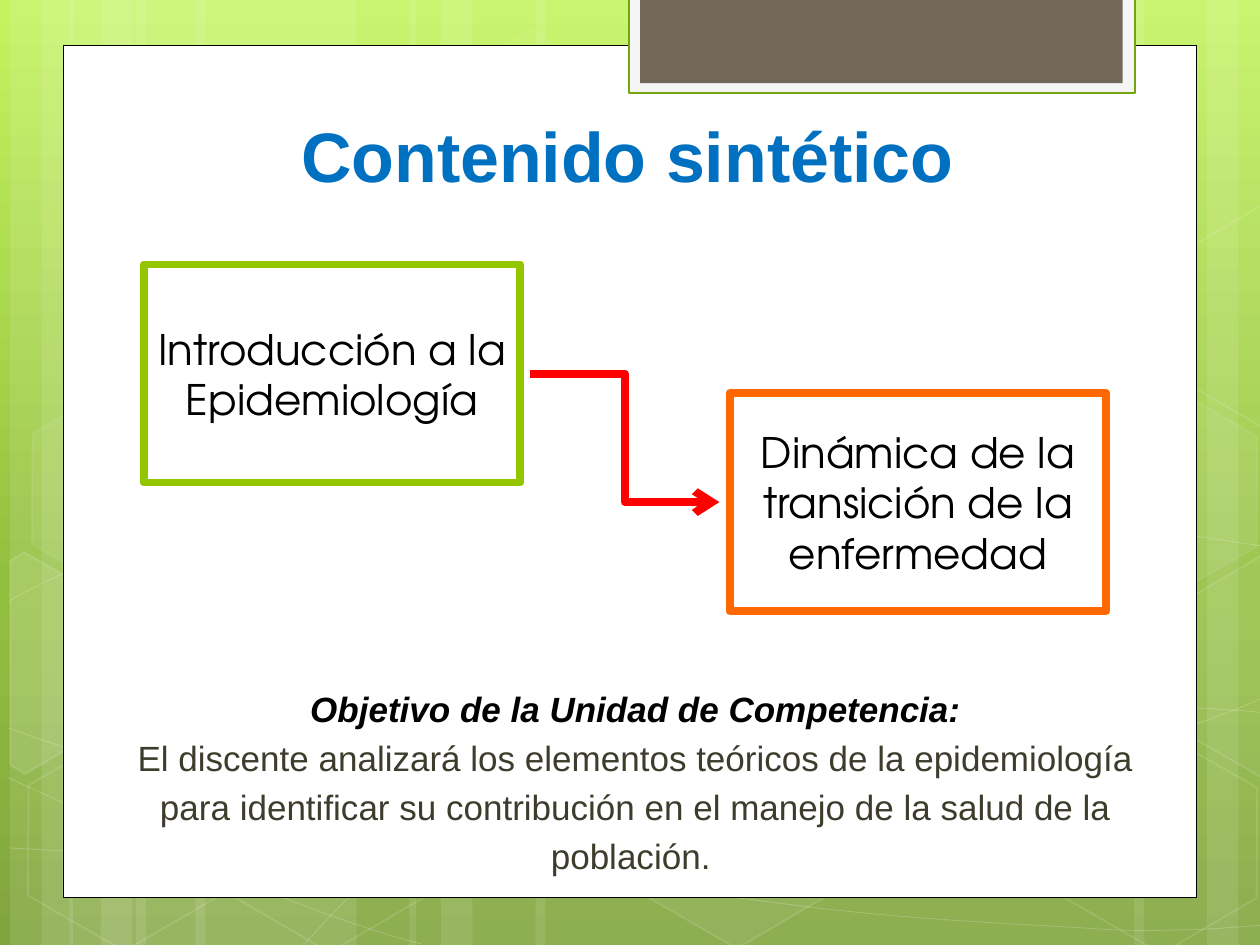
from copy import deepcopy
from dataclasses import dataclass
from math import cos, radians, sin

from lxml.etree import SubElement
from pptx import Presentation
from pptx.dml.color import RGBColor
from pptx.enum.shapes import MSO_CONNECTOR, MSO_SHAPE
from pptx.enum.text import MSO_ANCHOR, PP_ALIGN
from pptx.oxml.ns import qn
from pptx.util import Inches, Pt


@dataclass(frozen=True)
class Theme:
    sky: tuple = ((0, "C3F35F"), (0.62, "93BF3F"), (1, "81A53E"))
    white: str = "FFFFFF"
    black: str = "000000"
    tab: str = "F5F5F5"
    tab_edge: str = "74A510"
    tab_core: str = "71685A"
    title: str = "0070C0"
    body: str = "3E3D2D"
    green: str = "94C600"
    orange: str = "FF6700"
    red: str = "FF0000"
    font: str = "Arial"
    box_font: str = "TeX Gyre Adventor"
    title_size: int = 40
    body_size: int = 20
    box_size: int = 24
    thick: float = 4.5


THEME = Theme()
TILT = 30

STRIPES = [
    (1.08, 1.75), (0.08, 0.5), (0.33, 0.83), (1.55, 1.75), (0.55, 0.5), (0.8, 0.83),
    (7.33, 1.75), (9.58, 0.5), (9, 0.83), (4.25, 3.08), (3.25, 0.5), (3.5, 0.83),
]
CURVES = [
    [(0.07, 6.73), (0.61, 6.76), (1.15, 6.79), (1.9, 6.78), (2.65, 6.77), (3.58, 6.75),
     (4.58, 6.65), (5.58, 6.55), (7, 6.36), (7.92, 6.17), (8.83, 5.98), (9.77, 5.68),
     (10.07, 5.51)],
    [(0.07, 4.77), (0.36, 4.61), (0.65, 4.46), (1.21, 4.31), (1.78, 4.16), (2.59, 3.94),
     (3.47, 3.87), (4.36, 3.8), (5.44, 3.79), (6.54, 3.87), (7.64, 3.95), (9.47, 4.26),
     (10.07, 4.34)],
    [(0.06, 6.17), (1.27, 6.72), (2.47, 7.27), (3.34, 7.49)],
    [(0.07, 5.78), (0.38, 5.89), (0.7, 6), (1.28, 6.16), (1.86, 6.31), (2.73, 6.56),
     (3.57, 6.73), (4.4, 6.9), (5.45, 7.08), (6.28, 7.18), (7.11, 7.29), (8, 7.33),
     (8.53, 7.36), (9.05, 7.4), (9.19, 7.38), (9.45, 7.38), (9.71, 7.37), (9.89, 7.35),
     (10.07, 7.34)],
    [(2.42, 7.49), (2.6, 7.29), (2.78, 7.09), (3.02, 6.91), (3.26, 6.73), (3.6, 6.53),
     (3.88, 6.39), (4.16, 6.25), (4.33, 6.19), (4.7, 6.09), (5.06, 5.99), (5.73, 5.85),
     (6.08, 5.78), (6.44, 5.71), (6.49, 5.71), (6.8, 5.69), (7.11, 5.66), (7.6, 5.63),
     (7.94, 5.62), (8.29, 5.61), (8.86, 5.62), (8.86, 5.62), (9.08, 5.62), (9.31, 5.62),
     (9.53, 5.62), (9.71, 5.63), (9.88, 5.64), (10.06, 5.66)],
]
HEXAGONS = [
    (3.34, 0.36, 4, 8), (4.97, 5.89, 6, 12), (0.11, 5.91, 0, 12), (0.14, 3.12, 7, 8),
    (1.74, 5.92, 0, 12), (7.53, 4.53, 10, 12), (8.34, 5.93, 0, 12), (8.34, 3.14, 7, 8),
]
CUT_HEXAGONS = [
    ((0.36, 5.35), 10, [(0.08, 4.45), (0.19, 4.38), (0.96, 4.82), (0.95, 5.7), (0.2, 6.14),
                        (0.08, 6.07)]),
    ((9.85, 5.2), 4, [(9.26, 4.85), (10.01, 4.41), (10.09, 4.46), (10.09, 6.13),
                      (10.02, 6.17), (9.26, 5.73)]),
    ((9.85, 2.41), 0, [(9.26, 2.07), (10.01, 1.63), (10.1, 1.68), (10.09, 3.35),
                       (10.02, 3.39), (9.26, 2.95)]),
]
OBJECTIVE = [
    "Objetivo de la Unidad de Competencia:",
    "El discente analizará los elementos teóricos de la epidemiología",
    "para identificar su contribución en el manejo de la salud de la",
    "población. ",
]


def rgb(value):
    return RGBColor.from_string(value)


def set_alpha(sp, parent, percent):
    for color in sp.element.xpath(f"./p:spPr/{parent}a:solidFill/a:srgbClr"):
        SubElement(color, qn("a:alpha")).set("val", str(percent * 1000))


def paint(sp, fill=None, line=None, width=1, fill_alpha=100, line_alpha=100):
    sp.shadow.inherit = False
    if fill and fill_alpha:
        sp.fill.solid()
        sp.fill.fore_color.rgb = rgb(fill)
        if fill_alpha < 100:
            set_alpha(sp, "", fill_alpha)
    else:
        sp.fill.background()
    if line:
        sp.line.color.rgb = rgb(line)
        sp.line.width = Pt(width)
        if line_alpha < 100:
            set_alpha(sp, "a:ln/", line_alpha)
    else:
        sp.line.fill.background()


def add_box(s, box, shape=MSO_SHAPE.RECTANGLE, **style):
    sp = s.shapes.add_shape(shape, *map(Inches, box))
    paint(sp, **style)
    return sp


def add_path(s, points, origin, close, **style):
    x, y = origin
    (x0, y0), *rest = [(Inches(x + px), Inches(y + py)) for px, py in points]
    builder = s.shapes.build_freeform(x0, y0)
    builder.add_line_segments(rest, close=close)
    sp = builder.convert_to_shape()
    paint(sp, **style)
    return sp


def bend(sp):
    lines = sp.element.xpath(".//a:lnTo")
    for i in range(0, len(lines), 3):
        first, *others = lines[i:i + 3]
        first.tag = qn("a:cubicBezTo")
        for line in others:
            first.append(line[0])
            line.getparent().remove(line)


def untilt(points, center):
    cx, cy = center
    c, d = cos(radians(TILT)), sin(radians(TILT))
    return [(cx + (x - cx) * c + (y - cy) * d, cy + (y - cy) * c - (x - cx) * d)
            for x, y in points]


def write(p, text, size, color, font=THEME.font, bold=False, italic=False):
    p.add_run().text = text
    p.alignment = PP_ALIGN.CENTER
    f = p.font
    f.name, f.size, f.bold, f.italic = font, Pt(size), bold, italic
    f.color.rgb = rgb(color)


def fill_background(s):
    fill = s.background.fill
    fill.gradient()
    fill.gradient_angle = 270
    stops = s.element.xpath(".//a:gsLst")[0]
    stops.insert(1, deepcopy(stops[0]))
    for stop, (position, color) in zip(fill.gradient_stops, THEME.sky):
        stop.position = position
        stop.color.rgb = rgb(color)


def add_backdrop(s, box):
    x, y, _, h = box
    white = THEME.white
    for left, width in STRIPES:
        add_box(s, (x + left, y, width, h), fill=white, fill_alpha=10)
    for nodes in CURVES:
        bend(add_path(s, nodes, (x, y), False, line=white, width=0.5, line_alpha=20))
    for left, top, fill_alpha, line_alpha in HEXAGONS:
        sp = add_box(s, (x + left, y + top, 1.75, 1.52), MSO_SHAPE.HEXAGON, fill=white,
                     fill_alpha=fill_alpha, line=white, line_alpha=line_alpha)
        sp.adjustments[0] = 0.285
        sp.rotation = TILT
    for center, fill_alpha, points in CUT_HEXAGONS:
        sp = add_path(s, untilt(points, center), (x, y), True, fill=white,
                      fill_alpha=fill_alpha, line=white, line_alpha=12)
        sp.rotation = TILT


def add_panel(s, box):
    x, y, _, _ = box
    add_box(s, box, fill=THEME.white, line=THEME.black, width=0.5)
    add_box(s, (x + 4.49, y - 0.38, 4.02, 0.76), fill=THEME.tab, line=THEME.tab_edge, width=1.25)
    add_box(s, (x + 4.58, y - 0.38, 3.83, 0.68), fill=THEME.tab_core)


def add_title(s, box):
    tf = add_box(s, box).text_frame
    tf.word_wrap = True
    tf.vertical_anchor = MSO_ANCHOR.BOTTOM
    write(tf.paragraphs[0], "Contenido sintético", THEME.title_size, THEME.title, bold=True)


def add_objective(s, box):
    tf = s.shapes.add_textbox(*map(Inches, box)).text_frame
    tf.word_wrap = True
    for i, text in enumerate(OBJECTIVE):
        head = i == 0
        p = tf.paragraphs[0] if head else tf.add_paragraph()
        write(p, text, THEME.body_size, THEME.black if head else THEME.body,
              bold=head, italic=head)
        p.space_before = Pt(4)
        pPr = p._p.get_or_add_pPr()
        pPr.set("marL", str(Inches(0.38)))
        pPr.set("indent", str(Inches(-0.3)))


def add_topic(s, box, text, color):
    tf = add_box(s, box, fill=THEME.white, line=color, width=THEME.thick).text_frame
    tf.word_wrap = True
    tf.vertical_anchor = MSO_ANCHOR.MIDDLE
    write(tf.paragraphs[0], text, THEME.box_size, THEME.black, THEME.box_font)


def add_flow(s, box):
    x, y, w, h = box
    topic_w, topic_h, gap = 2.99, 1.73, 0.08
    add_topic(s, (x, y, topic_w, topic_h), "Introducción a la Epidemiología", THEME.green)
    ends = (x + topic_w + gap, y + topic_h / 2, x + w - topic_w - gap, y + h - topic_h / 2)
    arrow = s.shapes.add_connector(MSO_CONNECTOR.ELBOW, *map(Inches, ends))
    arrow.line.color.rgb = rgb(THEME.red)
    arrow.line.width = Pt(THEME.thick)
    SubElement(arrow.element.xpath("./p:spPr/a:ln")[0], qn("a:tailEnd")).set("type", "arrow")
    SubElement(arrow.element.spPr, qn("a:effectLst"))
    add_topic(s, (x + w - topic_w, y + h - topic_h, topic_w, topic_h),
              "Dinámica de la transición de la enfermedad", THEME.orange)


def main():
    prs = Presentation()
    prs.slide_width, prs.slide_height = Inches(10), Inches(7.5)
    s = prs.slides.add_slide(prs.slide_layouts[6])
    fill_background(s)
    add_backdrop(s, (0, 0, 10, 7.5))
    add_panel(s, (0.5, 0.36, 9, 6.76))
    add_title(s, (1.14, 0.36, 7.68, 1.25))
    add_objective(s, (0.83, 5.41, 8.35, 1.57))
    add_flow(s, (1.14, 2.1, 7.64, 2.75))
    prs.save("out.pptx")


if __name__ == "__main__":
    main()
